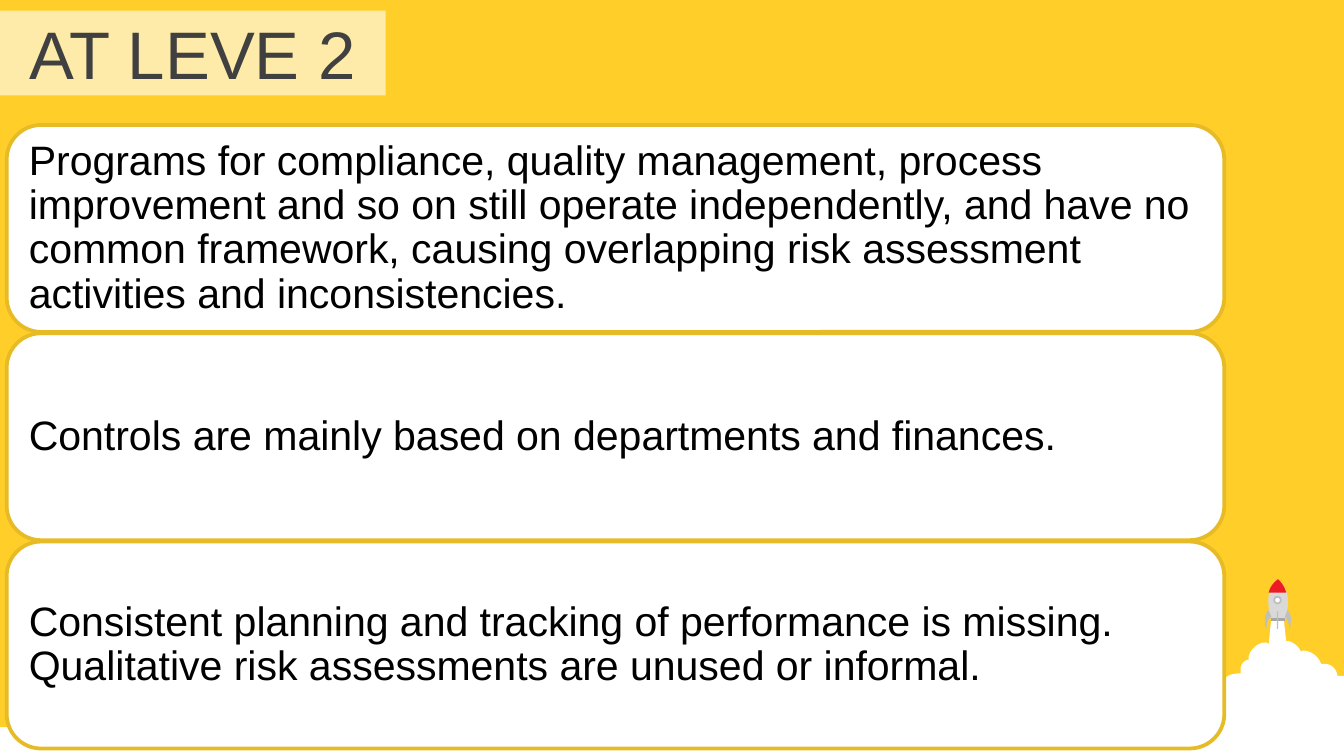
from dataclasses import dataclass
from pptx import Presentation
from pptx import util as u
from pptx.dml import color
from pptx.enum import shapes, text

Inches, Pt = u.Inches, u.Pt
KIND = shapes.MSO_SHAPE


@dataclass(frozen=True)
class Theme:
    back: str = "FFCE29"
    white: str = "FFFFFF"
    band: str = "FFEBA9"
    edge: str = "E7BB25"
    dark: str = "404040"
    black: str = "000000"
    body: str = "D9D9D9"
    base: str = "A6A6A6"
    fin: str = "BFBFBF"
    nose: str = "ED1C24"
    font: str = "Arial"
    head: int = 36
    copy: int = 22


T = Theme()

CARDS = [
    "Programs for compliance, quality management, process improvement and so on "
    "still operate independently, and have no common framework, causing "
    "overlapping risk assessment activities and inconsistencies.",
    "Controls are mainly based on departments and finances.",
    "Consistent planning and tracking of performance is missing. "
    "Qualitative risk assessments are unused or informal.",
]

CLOUD = [
    (71, 28), (80, 28), (82, 46), (84, 46), (87, 47, 90, 49, 92, 52),
    (93, 54), (94, 53), (100, 53, 106, 57, 108, 63), (111, 63),
    (115, 63, 119, 66, 120, 71), (120, 72), (125, 72), (125, 129), (123, 129),
    (119, 129, 115, 128, 112, 126), (111, 125), (110, 126),
    (108, 127, 106, 128, 103, 128), (100, 128, 98, 126, 96, 124),
    (94, 123), (94, 124), (92, 127, 89, 128, 85, 128),
    (82, 128, 79, 127, 77, 125), (76, 124), (74, 125),
    (70, 128, 65, 130, 59, 130), (48, 130, 42, 125, 38, 120),
    (36, 122, 32, 123, 29, 122), (25, 121, 19, 119, 18, 114),
    (18, 112), (17, 113), (16, 114, 14, 114, 11, 114),
    (5, 114, 0, 109, 0, 103), (0, 97, 5, 92, 11, 92), (13, 92),
    (14, 93), (14, 91), (14, 82, 21, 75, 31, 75), (35, 75), (36, 74),
    (39, 71, 43, 70, 48, 70), (48, 67), (48, 64, 50, 61, 53, 60),
    (54, 60), (54, 58), (55, 52, 61, 47, 67, 47), (69, 48),
]
HULL = [(71, 31), (69, 22, 65, 9, 76, 0), (87, 10, 83, 23, 81, 31)]
BASE = [(71, 29), (81, 29), (81, 31), (71, 31)]
NOSE = [(76, 0), (79, 3, 81, 6, 82, 10), (69, 10), (70, 6, 72, 3, 76, 0)]
LEFT = [(69, 23), (71, 28), (67, 30, 68, 35, 67, 37), (66, 34, 65, 26, 69, 23)]
RIGHT = [(83, 23), (81, 28), (84, 30, 84, 35, 85, 37), (85, 34, 87, 26, 83, 23)]


def rgb(code):
    return color.RGBColor.from_string(code)


def paint(shape, fill, line=None, width=1):
    shape.shadow.inherit = False
    shape.fill.solid()
    shape.fill.fore_color.rgb = rgb(fill)
    if line:
        shape.line.color.rgb = rgb(line)
        shape.line.width = Pt(width)
    else:
        shape.line.fill.background()


def block(slide, kind, box, fill, line=None, width=1):
    shape = slide.shapes.add_shape(kind, *map(Inches, box))
    paint(shape, fill, line, width)
    return shape


def write(shape, words, size, ink, align):
    frame = shape.text_frame
    frame.word_wrap = True
    frame.auto_size = text.MSO_AUTO_SIZE.NONE
    frame.vertical_anchor = text.MSO_ANCHOR.MIDDLE
    para = frame.paragraphs[0]
    para.alignment = align
    run = para.add_run()
    run.text = words
    run.font.name = T.font
    run.font.size = Pt(size)
    run.font.color.rgb = rgb(ink)
    return frame


def trace(path, steps=8):
    spots = [path[0]]
    for part in path[1:]:
        if len(part) == 2:
            spots.append(part)
            continue
        ax, ay = spots[-1]
        bx, by, cx, cy, dx, dy = part
        for step in range(1, steps + 1):
            t = step / steps
            s = 1 - t
            w = (s ** 3, 3 * s * s * t, 3 * s * t * t, t ** 3)
            spots.append((
                w[0] * ax + w[1] * bx + w[2] * cx + w[3] * dx,
                w[0] * ay + w[1] * by + w[2] * cy + w[3] * dy,
            ))
    return [(Inches(x / 100), Inches(y / 100)) for x, y in spots]


def draw(slide, x, y, path, fill):
    spots = trace(path)
    pen = slide.shapes.build_freeform(*spots[0])
    pen.add_line_segments(spots[1:], close=True)
    paint(pen.convert_to_shape(Inches(x), Inches(y)), fill)


def rocket(slide, x, y):
    for path, fill in ((CLOUD, T.white), (HULL, T.body), (BASE, T.base), (NOSE, T.nose)):
        draw(slide, x, y, path, fill)
    block(slide, KIND.OVAL, (x + 0.73, y + 0.13, 0.05, 0.05), T.white, T.fin)
    block(slide, KIND.RECTANGLE, (x + 0.75, y + 0.24, 0.01, 0.13), T.fin)
    for path in (LEFT, RIGHT):
        draw(slide, x, y, path, T.fin)


def title(slide, x, y, w, h):
    shape = slide.shapes.title
    shape.left, shape.top, shape.width, shape.height = map(Inches, (x, y, w, h))
    shape.fill.solid()
    shape.fill.fore_color.rgb = rgb(T.band)
    write(shape, "AT LEVE 2", T.head, T.dark, text.PP_ALIGN.CENTER)


def cards(slide, x, y, w, h, gap=0.01):
    tall = (h - gap * (len(CARDS) - 1)) / len(CARDS)
    for i, words in enumerate(CARDS):
        box = (x, y + i * (tall + gap), w, tall)
        card = block(slide, KIND.ROUNDED_RECTANGLE, box, T.white, T.edge, 2)
        frame = write(card, words, T.copy, T.black, text.PP_ALIGN.LEFT)
        frame.margin_left = frame.margin_right = Inches(0.09)
        frame.margin_top = frame.margin_bottom = Inches(0.09)
        frame.paragraphs[0].line_spacing = 0.9
        frame.paragraphs[0].space_after = Pt(0.35 * T.copy)


def main():
    deck = Presentation()
    deck.slide_width = Inches(10)
    deck.slide_height = deck.slide_width * 9 // 16
    slide = deck.slides.add_slide(deck.slide_layouts[5])
    slide.background.fill.solid()
    slide.background.fill.fore_color.rgb = rgb(T.back)
    block(slide, KIND.RECTANGLE, (0, 5.41, 10, 0.24), T.white)
    rocket(slide, 8.75, 4.31)
    title(slide, 0, 0.08, 2.87, 0.63)
    cards(slide, 0.05, 0.93, 9.06, 4.64)
    deck.save("out.pptx")


if __name__ == "__main__":
    main()
